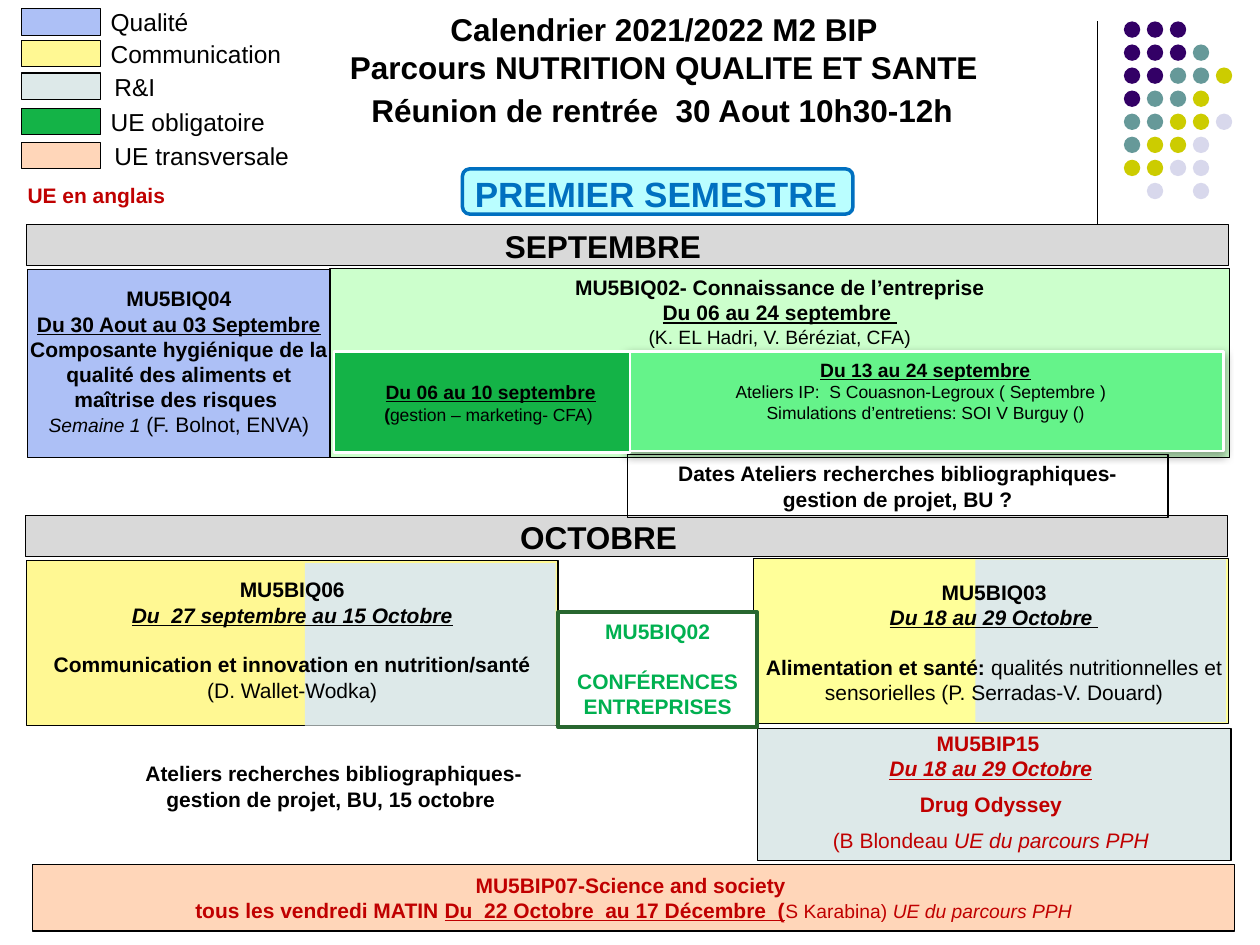
from lxml import etree
from pptx import Presentation
from pptx.dml.color import RGBColor
from pptx.enum.shapes import MSO_CONNECTOR, MSO_SHAPE
from pptx.enum.text import MSO_ANCHOR, MSO_AUTO_SIZE, PP_ALIGN
from pptx.oxml.ns import qn
from pptx.util import Inches, Pt

RECT, ROUND, OVAL = MSO_SHAPE.RECTANGLE, MSO_SHAPE.ROUNDED_RECTANGLE, MSO_SHAPE.OVAL
TOP, MIDDLE = MSO_ANCHOR.TOP, MSO_ANCHOR.MIDDLE
LEFT, CENTER = PP_ALIGN.LEFT, PP_ALIGN.CENTER

C = {
    "black": "000000", "white": "FFFFFF", "red": "C00000", "blue": "0070C0",
    "cyan": "BAFEFF", "grey": "D9D9D9", "quality": "ADC0F6",
    "communication": "FFF893", "research": "DDE9E9", "required": "14B347",
    "shared": "FFD6B9", "company": "CCFFCC", "workshop": "65F38A",
    "pale yellow": "FFFF99", "green": "00B050", "dark green": "28672F",
    "P": "330066", "T": "669999", "Y": "CCCC00", "L": "D8D8EC",
}

prs = Presentation()
prs.slide_width, prs.slide_height = Inches(10), Inches(7.5)
s = prs.slides.add_slide(prs.slide_layouts[5])


def box(at, fill=None, line="black", width=0.75, kind=RECT):
    sp = s.shapes.add_shape(kind, *map(Inches, at))
    sp.shadow.inherit = False
    if fill:
        sp.fill.solid()
        sp.fill.fore_color.rgb = RGBColor.from_string(C[fill])
    else:
        sp.fill.background()
    if line:
        sp.line.color.rgb = RGBColor.from_string(C[line])
        sp.line.width = Pt(width)
    else:
        sp.line.fill.background()
    return sp


def write(target, paras, color="black", align=CENTER, wrap=True, anchor=TOP):
    """Fill a shape, or a new text box at a position.

    Each paragraph is (space before, [(text, size, style letters), ...]).
    """
    if isinstance(target, tuple):
        target = s.shapes.add_textbox(*map(Inches, target))
    tf = target.text_frame
    frame = {"word_wrap": wrap, "vertical_anchor": anchor, "auto_size": MSO_AUTO_SIZE.NONE}
    for name, value in frame.items():
        setattr(tf, name, value)
    for i, (before, runs) in enumerate(paras):
        p = tf.add_paragraph() if i else tf.paragraphs[0]
        p.alignment, p.space_before = align, Pt(before)
        for text, size, style in runs:
            r = p.add_run()
            r.text = text
            font = {"name": "Arial", "size": Pt(size), "bold": "b" in style,
                    "italic": "i" in style, "underline": "u" in style}
            for name, value in font.items():
                setattr(r.font, name, value)
            r.font.color.rgb = RGBColor.from_string(C[color])


# Corner ornament: vertical rule and dots
rule = s.shapes.add_connector(MSO_CONNECTOR.STRAIGHT, Inches(8.71), Inches(0.17),
                              Inches(8.71), Inches(1.83))
rule.line.color.rgb = RGBColor.from_string(C["black"])
rule.line.width = Pt(0.75)
etree.SubElement(rule._element.spPr, qn("a:effectLst"))
dots = ["PPP", "PPPT", "PPTTY", "PTTY", "TTYYL", "TYYL", "YYLL", ".L.L"]
for row, colors in enumerate(dots):
    for col, color in enumerate(colors):
        if color != ".":
            box((8.92 + 0.1825 * col, 0.17 + 0.183 * row, 0.13, 0.13), color, None, kind=OVAL)

# Title, meeting and semester
title = s.shapes.title
title.left, title.top, title.width, title.height = map(Inches, (1.11, 0.03, 8.32, 0.71))
write(title, [(0, [("Calendrier 2021/2022 M2 BIP", 18, "b")]),
              (0, [("Parcours NUTRITION QUALITE ET SANTE", 18, "b")])])
write((2.85, 0.67, 4.86, 0.4),
      [(0, [("Réunion de rentrée\u00a0\u00a030 Aout 10h30-12h".replace("\u00a0", " "), 18, "b")])],
      align=LEFT, wrap=False)
box((3.67, 1.34, 3.1, 0.36), "cyan", "blue", 2, ROUND)
write((3.67, 1.32, 3.1, 0.44), [(0, [("PREMIER SEMESTRE", 20, "b")])],
      "blue", LEFT, False)

# Legend
legend = [
    ("Qualité", "quality", 0.07, 0.78, 0.83),
    ("Communication", "communication", 0.32, 0.78, 1.57),
    ("R&I", "research", 0.58, 0.81, 0.53),
    ("UE obligatoire", "required", 0.86, 0.78, 1.44),
    ("UE transversale", "shared", 1.13, 0.81, 1.6),
]
for label, color, y, x, width in legend:
    box((0.17, y, 0.63, 0.21), color)
    write((x, y - 0.06, width, 0.34), [(0, [(label, 14, "")])], align=LEFT, wrap=False)
write((0.12, 1.4, 1.31, 0.3), [(0, [("UE en anglais", 12, "b")])], "red", LEFT, False)

# Month bars
for month, x, y, text_x, width in [("SEPTEMBRE", 0.21, 1.78, 3.91, 1.84),
                                   ("OCTOBRE", 0.2, 4.09, 4.03, 1.53)]:
    box((x, y, 9.54, 0.33), "grey")
    write((text_x, y - 0.03, width, 0.4), [(0, [(month, 18, "b")])], align=LEFT, wrap=False)

# September: food hygiene
box((0.22, 2.14, 2.4, 1.49), "quality")
write((0.13, 2.22, 2.58, 1.31), [
    (0, [("MU5BIQ04", 12, "b")]),
    (0, [("Du 30 Aout au 03 Septembre", 12, "bu")]),
    (0, [("Composante hygiénique de la qualité des aliments et maîtrise des risques ", 12, "b")]),
    (0, [("Semaine 1 ", 11, "i"), ("(F. Bolnot, ENVA)", 12, "")]),
])

# September: company knowledge and its two parts
write(box((2.62, 2.13, 7.14, 1.5), "company"), [
    (0, [("MU5BIQ02- Connaissance de l’entreprise", 12, "b")]),
    (0, [("Du 06 au 24 septembre ", 12, "bu")]),
    (0, [("(K. EL Hadri, V. Béréziat, CFA)", 11, "")]),
])
workshop = box((4.98, 2.79, 4.73, 0.79), "workshop", "white", 1.5)
effects = workshop._element.spPr.find(qn("a:effectLst"))
shadow = etree.SubElement(effects, qn("a:outerShdw"), blurRad=str(Pt(5)), dist=str(Pt(1.8)),
                          dir="5400000", rotWithShape="0")
shade = etree.SubElement(shadow, qn("a:srgbClr"), val=C["black"])
etree.SubElement(shade, qn("a:alpha"), val="35000")
box((2.65, 2.79, 2.35, 0.8), "required", "white", 1.5)
write((2.52, 2.97, 2.75, 0.47), [
    (0, [("Du 06 au 10 septembre", 11, "bu")]),
    (0, [("(", 10, "b"), ("gestion – marketing- CFA) ", 10, "")]),
])
write((4.71, 2.79, 5.27, 0.62), [
    (0, [("Du 13 au 24 septembre", 11, "bu")]),
    (0, [("Ateliers IP:  S Couasnon-Legroux ( Septembre )  ", 10, "")]),
    (0, [("Simulations d’entretiens: SOI V Burguy ()", 10, "")]),
])
write(box((4.98, 3.61, 4.29, 0.5)), [
    (0, [("Dates Ateliers recherches bibliographiques-", 12, "b")]),
    (0, [("gestion de projet, BU ?", 12, "b")]),
])

# October: two-coloured modules
box((0.21, 4.45, 4.22, 1.31), "communication")
box((2.42, 4.47, 1.99, 1.29), "research", None)
write((0.21, 4.53, 4.22, 1.11), [
    (0, [("MU5BIQ06", 12, "b")]),
    (0, [("Du  27 septembre au 15 Octobre", 12, "biu")]),
    (14, [("Communication et innovation en nutrition/santé", 12, "b")]),
    (0, [("(D. Wallet-Wodka)", 12, "")]),
])
box((5.98, 4.43, 3.77, 1.31), "pale yellow")
box((7.74, 4.44, 1.99, 1.29), "research", None)
write((5.98, 4.55, 3.82, 1.11), [
    (0, [("MU5BIQ03", 12, "b")]),
    (0, [("Du 18 au 29 Octobre ", 12, "biu")]),
    (14, [("Alimentation et santé: ", 12, "b"),
          ("qualités nutritionnelles et sensorielles (P. Serradas-V. Douard)", 12, "")]),
])

# October: English module, conferences and workshops
box((6.01, 5.78, 3.76, 1.05), "research")
write((6.5, 5.75, 2.73, 1.08), [
    (0, [("MU5BIP15 ", 12, "b")]),
    (0, [("Du 18 au 29 Octobre", 12, "biu")]),
    (6, [("Drug Odyssey", 12, "b")]),
    (6, [("(B Blondeau ", 12, ""), ("UE du parcours PPH", 12, "i")]),
], "red", wrap=False)
write(box((4.43, 4.86, 1.58, 0.91), "white", "dark green", 2.25), [
    (0, [("MU5BIQ02", 12, "b")]),
    (14, [("CONFÉRENCES ENTREPRISES", 12, "b")]),
], "green")
write((0.81, 5.99, 3.68, 0.51), [
    (0, [("Ateliers recherches bibliographiques-", 12, "b")]),
    (0, [("gestion de projet, BU, 15 octobre ", 12, "b")]),
])

# Shared module at the foot
write(box((0.26, 6.86, 9.54, 0.53), "shared"), [
    (0, [("MU5BIP07-Science and society ", 12, "b")]),
    (0, [("tous les vendredi MATIN ", 12, "b"),
         ("Du  22 Octobre  au 17 Décembre  (", 12, "bu"),
         ("S Karabina) ", 11, ""), ("UE du parcours PPH", 11, "i")]),
], "red", anchor=MIDDLE)

prs.save("out.pptx")
